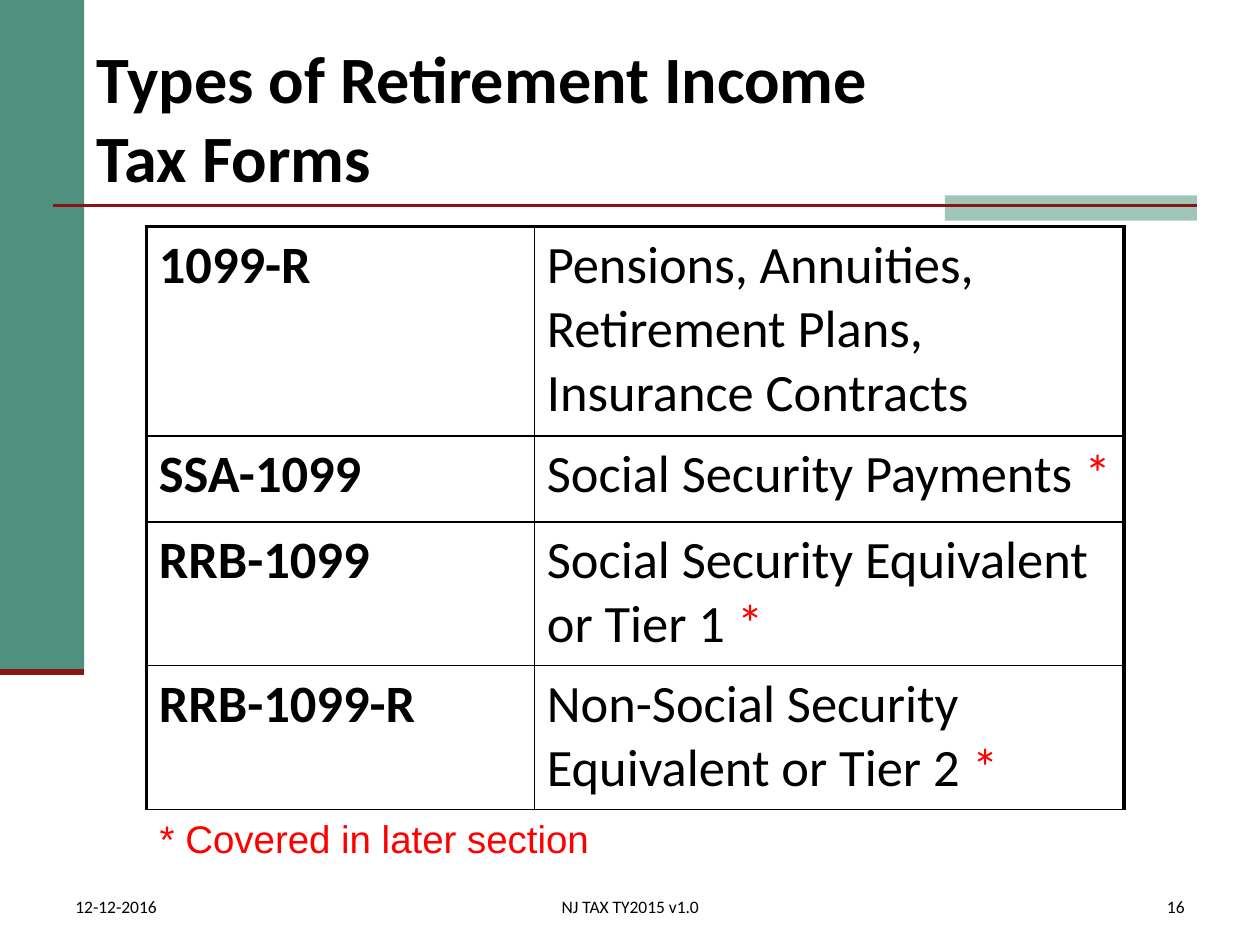
from lxml.etree import SubElement
from pptx import Presentation
from pptx.dml.color import RGBColor
from pptx.enum.shapes import MSO_CONNECTOR, MSO_SHAPE
from pptx.enum.text import MSO_ANCHOR, MSO_AUTO_SIZE, PP_ALIGN
from pptx.oxml.ns import qn
from pptx.util import Cm, Pt

BLACK, RED, MAROON = "000000", "FF0000", "891411"
GREEN, PALE_GREEN = "4F917E", "A0C6BA"

FORMS = [
    ("1099-R", "Pensions, Annuities, Retirement Plans, Insurance Contracts", False),
    ("SSA-1099", "Social Security Payments ", True),
    ("RRB-1099", "Social Security Equivalent or Tier 1 ", True),
    ("RRB-1099-R", "Non-Social Security Equivalent or Tier 2 ", True),
]
COLUMN_WIDTHS = [7.82, 11.89]
ROW_HEIGHTS = [4.22, 1.73, 2.9, 2.9]


def color(value):
    return RGBColor.from_string(value)


def add_run(paragraph, text, size, fill=BLACK, bold=False, font="Calibri"):
    run = paragraph.add_run()
    run.text = text
    run.font.name = font
    run.font.size = Pt(size)
    run.font.bold = bold
    run.font.color.rgb = color(fill)


def add_bar(slide, left, top, width, height, fill):
    shape = slide.shapes.add_shape(
        MSO_SHAPE.RECTANGLE, Cm(left), Cm(top), Cm(width), Cm(height))
    shape.shadow.inherit = False
    shape.fill.solid()
    shape.fill.fore_color.rgb = color(fill)
    shape.line.fill.background()


def add_rule(slide, left, right, y, width):
    line = slide.shapes.add_connector(
        MSO_CONNECTOR.STRAIGHT, Cm(left), Cm(y), Cm(right), Cm(y))
    line.line.color.rgb = color(MAROON)
    line.line.width = Pt(width)
    SubElement(line._element.spPr, qn("a:effectLst"))


def add_title(slide, lines):
    title = slide.shapes.title
    title.left, title.top = Cm(1.7), Cm(0.76)
    title.width, title.height = Cm(22.43), Cm(3.18)
    frame = title.text_frame
    frame.auto_size = MSO_AUTO_SIZE.NONE
    frame.vertical_anchor = MSO_ANCHOR.MIDDLE
    paragraph = frame.paragraphs[0]
    paragraph.alignment = PP_ALIGN.LEFT
    for index, line in enumerate(lines):
        if index:
            paragraph.add_line_break()
        add_run(paragraph, line, 37.8, bold=True)


def add_label(slide, left, top, width, height, text, size, wrap=True,
              align=PP_ALIGN.LEFT, anchor=MSO_ANCHOR.BOTTOM, **style):
    box = slide.shapes.add_textbox(Cm(left), Cm(top), Cm(width), Cm(height))
    frame = box.text_frame
    frame.word_wrap = wrap
    frame.vertical_anchor = anchor
    paragraph = frame.paragraphs[0]
    paragraph.alignment = align
    add_run(paragraph, text, size, **style)


def set_borders(cell, **widths):
    properties = cell._tc.get_or_add_tcPr()
    for side in "LRTB":
        line = SubElement(properties, qn(f"a:ln{side}"), w=str(Pt(widths.get(side, 1))))
        fill = SubElement(line, qn("a:solidFill"))
        SubElement(fill, qn("a:srgbClr"), val=BLACK)


def add_forms_table(slide):
    table = slide.shapes.add_table(
        len(FORMS), len(COLUMN_WIDTHS), Cm(2.95), Cm(4.57),
        Cm(sum(COLUMN_WIDTHS)), Cm(sum(ROW_HEIGHTS))).table
    table.first_row = table.horz_banding = False
    for column, width in zip(table.columns, COLUMN_WIDTHS):
        column.width = Cm(width)

    for index, (form, description, covered_later) in enumerate(FORMS):
        table.rows[index].height = Cm(ROW_HEIGHTS[index])
        name_cell, description_cell = table.rows[index].cells
        # Heavy outer frame on the top and sides, thin lines elsewhere
        top = 2.25 if index == 0 else 1
        set_borders(name_cell, L=2.25, T=top)
        set_borders(description_cell, R=2.25, T=top)
        for cell in (name_cell, description_cell):
            cell.fill.background()
        add_run(name_cell.text_frame.paragraphs[0], form, 30, bold=True)
        paragraph = description_cell.text_frame.paragraphs[0]
        add_run(paragraph, description, 30)
        if covered_later:
            add_run(paragraph, "*", 30, fill=RED)


def main():
    presentation = Presentation()
    presentation.slide_width, presentation.slide_height = Cm(25.4), Cm(19.05)
    slide = presentation.slides.add_slide(presentation.slide_layouts[5])

    # Side band and title rule
    add_bar(slide, 0, 0, 1.7, 13.54, GREEN)
    add_bar(slide, 19.05, 3.94, 5.08, 0.51, PALE_GREEN)
    add_rule(slide, 1.07, 24.13, 4.14, 1.5)
    add_rule(slide, 0, 1.7, 13.54, 3.5)

    # Title, table and its footnote
    add_title(slide, ["Types of Retirement Income ", "Tax Forms"])
    add_forms_table(slide)
    add_label(slide, 2.97, 16.31, 9.27, 1.19, "* Covered in later section", 22,
              wrap=False, anchor=MSO_ANCHOR.TOP, fill=RED, font="Arial")

    # Footer
    for left, width, text, align in [
        (1.27, 5.51, "12-12-2016", PP_ALIGN.LEFT),
        (8.41, 8.59, "NJ TAX TY2015 v1.0", PP_ALIGN.CENTER),
        (18.85, 5.28, "16", PP_ALIGN.RIGHT),
    ]:
        add_label(slide, left, 17.78, width, 0.84, text, 10, align=align)

    presentation.save("out.pptx")


if __name__ == "__main__":
    main()
